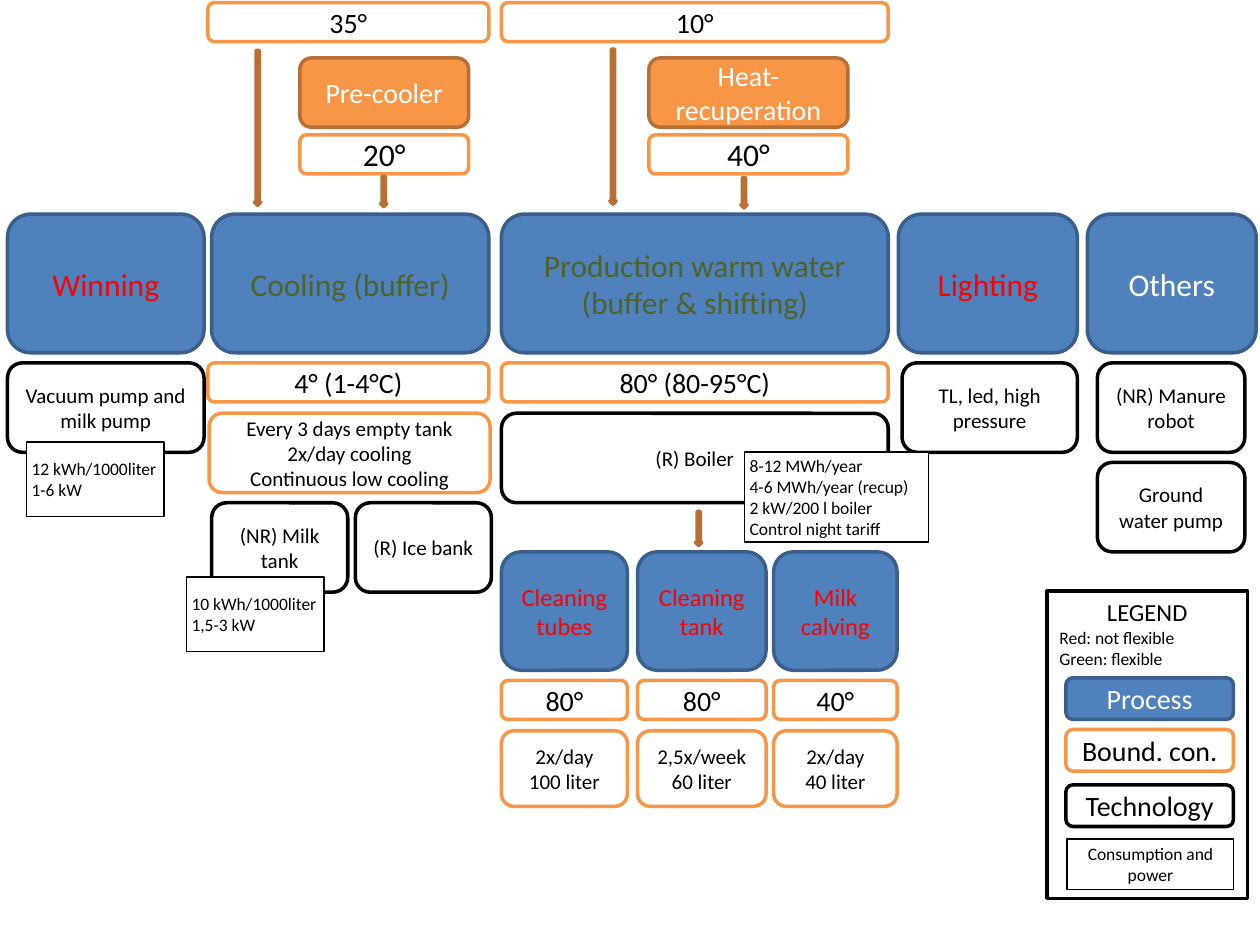
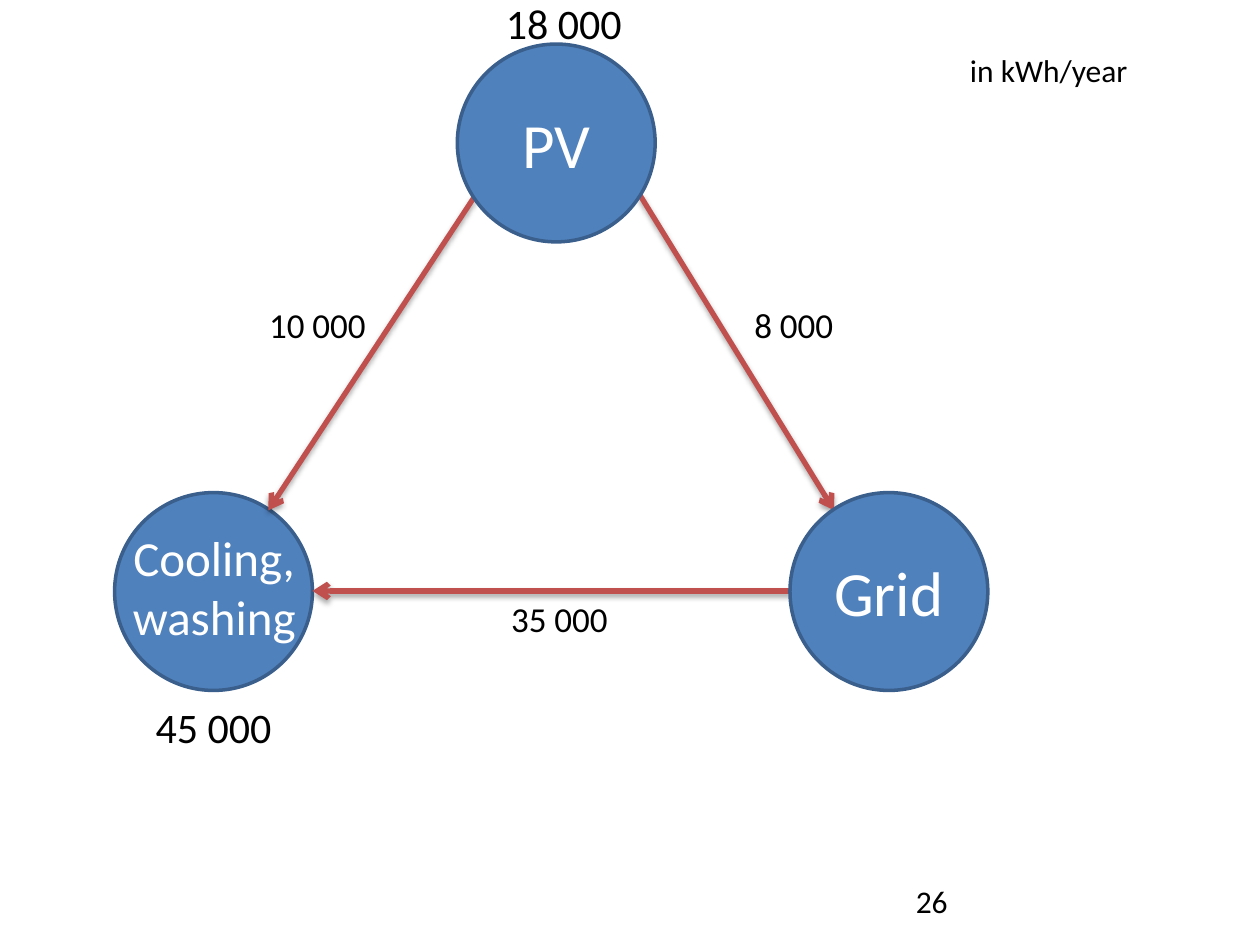
from lxml import etree
from pptx import Presentation
from pptx import util as u
from pptx.dml.color import RGBColor
from pptx.enum import shapes, text
from pptx.oxml import ns

HUES = {
    "white": "FFFFFF", "black": "000000", "red": "FF0000", "green": "4F6228",
    "blue": "4F81BD", "navy": "3A5F8C", "orange": "F79646", "brown": "B76F34",
    "brick": "C0504D",
}
FONT = "Calibri"
FORM = shapes.MSO_SHAPE
LEFT, MID = text.PP_ALIGN.LEFT, text.PP_ALIGN.CENTER

# Fill, line and text colour of each kind of box
KINDS = {
    "process": ("blue", "navy", "white"),
    "bound": ("white", "orange", "black"),
    "tech": ("white", "black", "black"),
    "device": ("orange", "brown", "white"),
}


def hue(name):
    return RGBColor.from_string(HUES[name])


def write(frame, words, size=18, color="black", align=MID,
          anchor=text.MSO_ANCHOR.MIDDLE, inset=None):
    """Fill a text frame, one paragraph per line of words."""
    frame.word_wrap = True
    frame.vertical_anchor = anchor
    if inset is not None:
        frame.margin_left = frame.margin_right = u.Inches(inset)
        frame.margin_top = frame.margin_bottom = u.Inches(inset)
    for i, line in enumerate(words.split("\n")):
        par = frame.paragraphs[0] if i == 0 else frame.add_paragraph()
        par.alignment = align
        run = par.add_run()
        run.text = line
        run.font.name = FONT
        run.font.size = u.Pt(size)
        run.font.color.rgb = hue(color)


class Deck:
    def __init__(self):
        self.prs = Presentation()
        self.prs.slide_width = u.Inches(10)
        self.prs.slide_height = u.Inches(7.5)
        self.slide = None

    def page(self):
        self.slide = self.prs.slides.add_slide(self.prs.slide_layouts[6])

    def shape(self, form, at, fill, line, width=2):
        item = self.slide.shapes.add_shape(form, *map(u.Inches, at))
        item.shadow.inherit = False
        item.fill.solid()
        item.fill.fore_color.rgb = hue(fill)
        item.line.color.rgb = hue(line)
        item.line.width = u.Pt(width)
        return item

    def box(self, kind, at, words, size, color=None):
        fill, line, ink = KINDS[kind]
        item = self.shape(FORM.ROUNDED_RECTANGLE, at, fill, line)
        write(item.text_frame, words, size, color or ink)

    def note(self, at, words, align=LEFT):
        item = self.shape(FORM.RECTANGLE, at, "white", "black", 1)
        write(item.text_frame, words, 10, align=align, inset=0.04)

    def down(self, x, y, tall):
        self.shape(FORM.DOWN_ARROW, (x, y, 0.05, tall), "orange", "brown")

    def disc(self, x, y, words=None):
        item = self.shape(FORM.OVAL, (x, y, 1.57, 1.57), "blue", "navy")
        if words:
            write(item.text_frame, words, 36, "white")

    def label(self, at, words, size, **form):
        item = self.slide.shapes.add_textbox(*map(u.Inches, at))
        write(item.text_frame, words, size, anchor=text.MSO_ANCHOR.TOP, **form)

    def flow(self, start, end):
        """Arrow with an open head and a soft shadow below."""
        item = self.slide.shapes.add_connector(
            shapes.MSO_CONNECTOR.STRAIGHT, *map(u.Inches, start + end))
        item.line.color.rgb = hue("brick")
        item.line.width = u.Pt(3)
        props = item.line._get_or_add_ln()
        etree.SubElement(props, ns.qn("a:tailEnd"), type="arrow")
        glow = etree.SubElement(item._element.spPr, ns.qn("a:effectLst"))
        drop = etree.SubElement(
            glow, ns.qn("a:outerShdw"), blurRad=str(u.Pt(3.1)),
            dist=str(u.Pt(1.8)), dir="5400000", rotWithShape="0")
        tone = etree.SubElement(drop, ns.qn("a:srgbClr"), val=HUES["black"])
        etree.SubElement(tone, ns.qn("a:alpha"), val="35000")


def farm(deck):
    deck.page()

    # Legend
    frame = deck.shape(FORM.RECTANGLE, (8.31, 4.69, 1.59, 2.44),
                       "white", "black").text_frame
    write(frame, "LEGEND\nRed: not flexible\nGreen: flexible", 10,
          align=LEFT, anchor=text.MSO_ANCHOR.TOP)
    head = frame.paragraphs[0]
    head.alignment = MID
    head.runs[0].font.size = u.Pt(14)
    for kind, y, words in (("process", 5.38, "Process"),
                           ("bound", 5.79, "Bound. con."),
                           ("tech", 6.23, "Technology")):
        deck.box(kind, (8.46, y, 1.33, 0.33), words, 16)
    deck.note((8.47, 6.66, 1.32, 0.4), "Consumption and power", MID)

    # Main processes
    for x, wide, words, color in (
            (0.06, 1.56, "Winning", "red"),
            (1.68, 2.2, "Cooling (buffer)", "green"),
            (3.98, 3.07, "Production warm water (buffer & shifting)", "green"),
            (7.13, 1.42, "Lighting", "red"),
            (8.63, 1.34, "Others", "white")):
        deck.box("process", (x, 1.7, wide, 1.1), words, 18, color)

    # Temperatures before and after each process
    for x, wide, warm, cold in ((1.65, 2.23, "35°", "4° (1-4°C)"),
                                (3.98, 3.07, "10°", "80° (80-95°C)")):
        deck.box("bound", (x, 0.02, wide, 0.31), warm, 16)
        deck.box("bound", (x, 2.88, wide, 0.31), cold, 16)

    # Heat devices
    for x, wide, words, heat in ((2.38, 1.34, "Pre-cooler", "20°"),
                                 (5.15, 1.58, "Heat-recuperation", "40°")):
        deck.box("device", (x, 0.46, wide, 0.55), words, 16)
        deck.box("bound", (x, 1.07, wide, 0.31), heat, 18)

    # Arrows
    for x, y, tall in ((2.02, 0.4, 1.23), (4.84, 0.39, 1.23),
                       (3.02, 1.4, 0.24), (5.88, 1.41, 0.24),
                       (5.52, 4.06, 0.27)):
        deck.down(x, y, tall)

    # Technologies
    deck.box("bound", (1.66, 3.28, 2.23, 0.63),
             "Every 3 days empty tank\n2x/day cooling\nContinuous low cooling", 12)
    for x, y, wide, words in (
            (0.06, 2.88, 1.56, "Vacuum pump and milk pump"),
            (1.68, 3.99, 1.08, "(NR) Milk tank"),
            (2.82, 3.99, 1.08, "(R) Ice bank"),
            (3.98, 3.28, 3.07, "(R) Boiler"),
            (7.16, 2.88, 1.39, "TL, led, high pressure"),
            (8.71, 2.88, 1.17, "(NR) Manure robot"),
            (8.71, 3.67, 1.17, "Ground water pump")):
        deck.box("tech", (x, y, wide, 0.71), words, 12)

    # Uses of warm water
    for x, wide, words, heat, need in (
            (3.98, 1, "Cleaning tubes", "80°", "2x/day\n100 liter"),
            (5.06, 1.02, "Cleaning tank", "80°", "2,5x/week\n60 liter"),
            (6.14, 0.98, "Milk calving", "40°", "2x/day\n40 liter")):
        deck.box("process", (x, 4.38, wide, 0.94), words, 14, "red")
        deck.box("bound", (x, 5.4, wide, 0.31), heat, 16)
        deck.box("bound", (x, 5.8, wide, 0.6), need, 12)

    # Consumption and power
    deck.note((0.21, 3.51, 1.09, 0.59), "12 kWh/1000liter\n1-6 kW")
    deck.note((1.48, 4.58, 1.09, 0.59), "10 kWh/1000liter\n1,5-3 kW")
    deck.note((5.91, 3.59, 1.46, 0.71),
              "8-12 MWh/year\n4-6 MWh/year (recup)\n"
              "2 kW/200 l boiler\nControl night tariff")


def power(deck):
    deck.page()

    # Flows between the nodes
    deck.disc(0.91, 3.91)
    deck.flow((5.08, 1.55), (6.62, 4.05))
    deck.flow((6.27, 4.69), (2.48, 4.69))
    deck.flow((3.76, 1.57), (2.13, 4.05))
    deck.disc(3.63, 0.35, "PV")
    deck.disc(6.27, 3.91, "Grid")
    deck.label((0.82, 4.14, 1.76, 1.04), "Cooling, washing", 28, color="white")

    # Totals and amounts
    for x, y, words in ((0.67, 5.52, "45 000"), (3.45, -0.07, "18 000")):
        deck.label((x, y, 2.05, 0.5), words, 24)
    for x, y, words in ((3.72, 4.69, "35 000"), (5.58, 2.36, "8 000"),
                        (1.8, 2.36, "10 000")):
        deck.label((x, y, 1.44, 0.44), words, 20)

    # Unit and page number
    deck.label((7.6, 0.36, 1.73, 0.4), "in kWh/year", 18, align=LEFT)
    deck.label((7.17, 6.95, 2.33, 0.4), "26", 18, align=LEFT)


def main():
    deck = Deck()
    farm(deck)
    power(deck)
    deck.prs.save("out.pptx")


if __name__ == "__main__":
    main()
